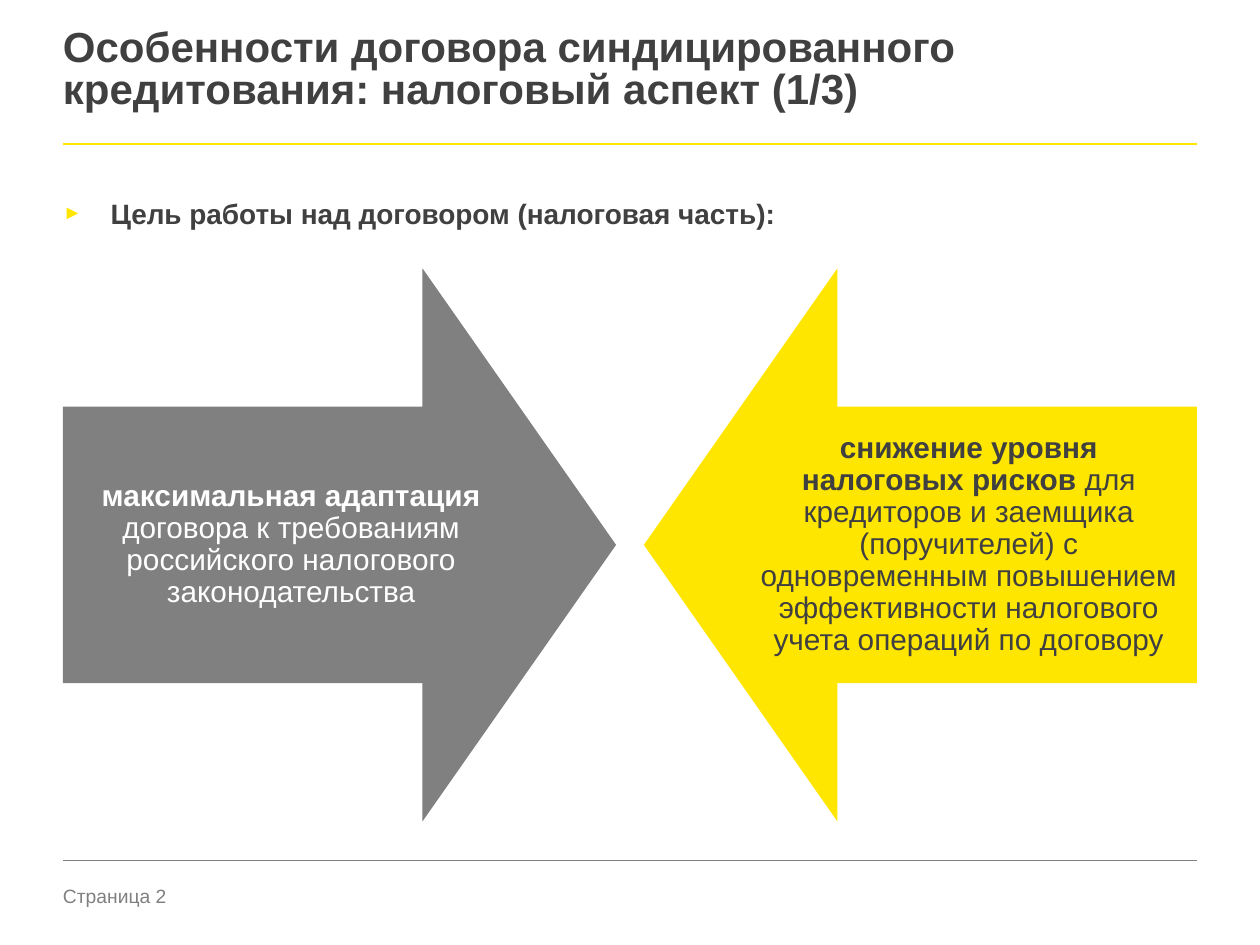
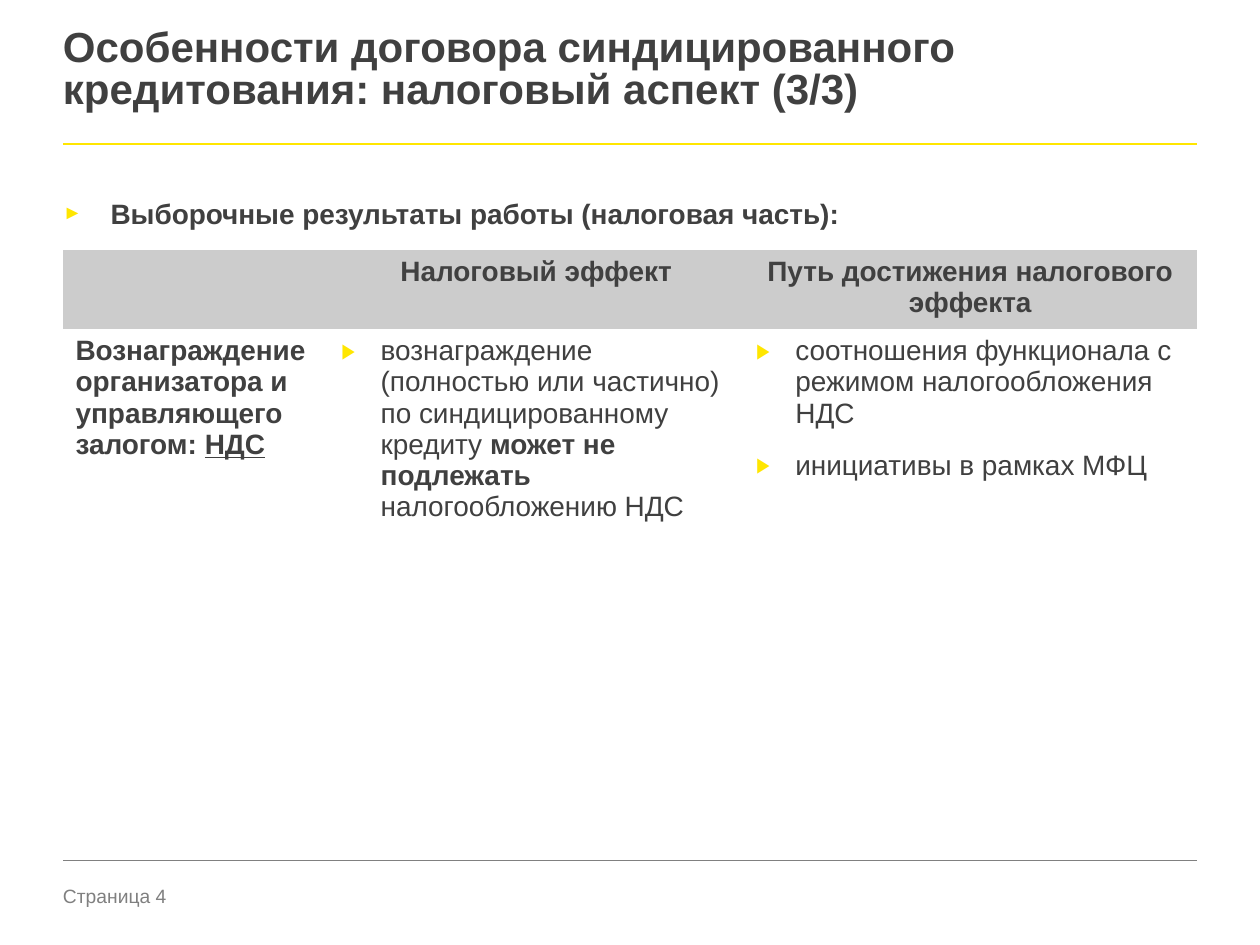
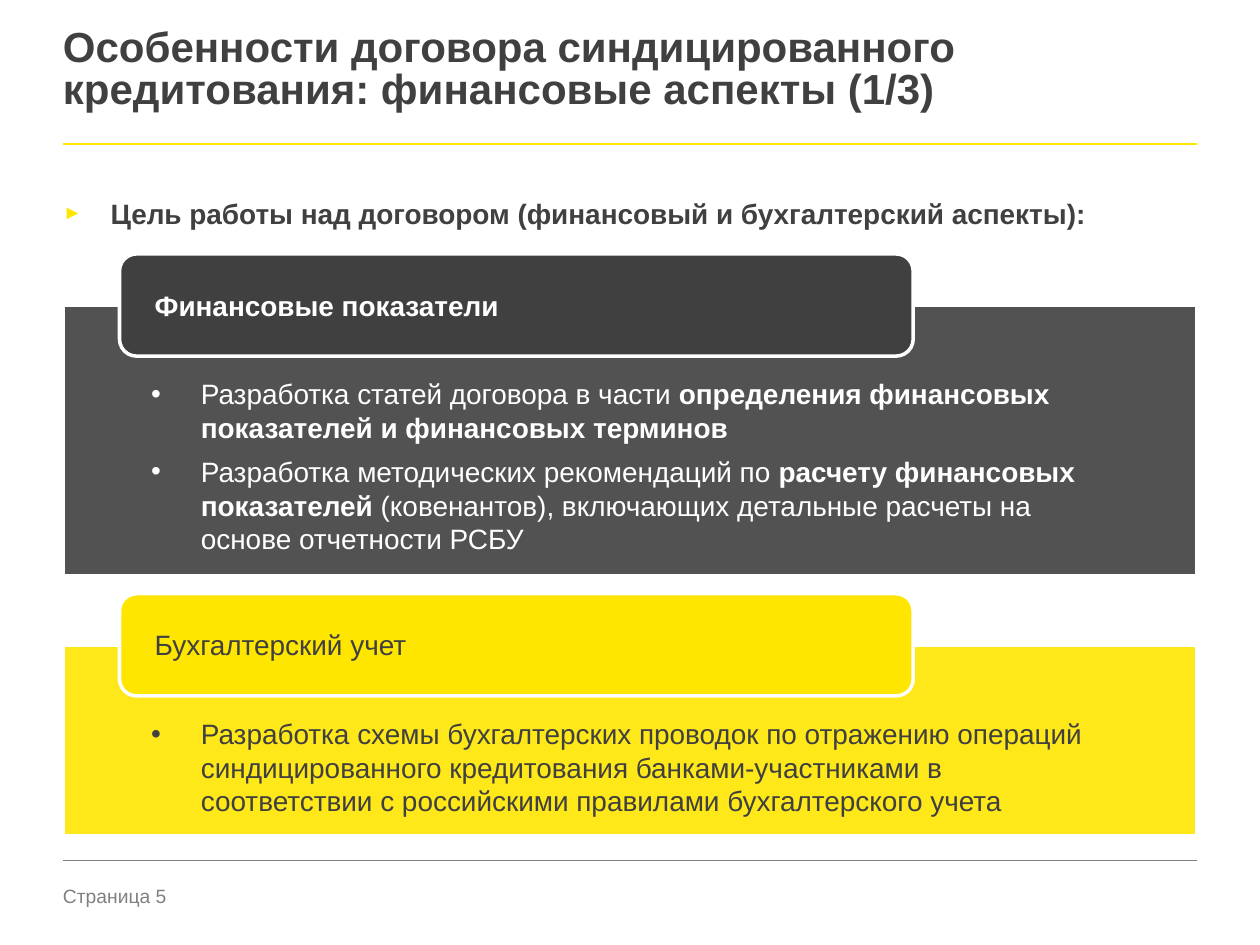
import lxml.etree
import pptx
import pptx.dml.color
import pptx.enum.shapes
import pptx.enum.text
import pptx.oxml.ns
import pptx.util

Cm = pptx.util.Cm
Pt = pptx.util.Pt
SHAPES = pptx.enum.shapes.MSO_SHAPE
ANCHOR = pptx.enum.text.MSO_ANCHOR
ALIGN = pptx.enum.text.PP_ALIGN

# Runs are (text, style): "b" is bold, "u" is underlined.
TITLE_START = "Особенности договора синдицированного кредитования: "
TAX_GOAL = {
    "page": 2,
    "title": "налоговый аспект (1/3)",
    "lead": "Цель работы над договором (налоговая часть):",
}
TAX_RESULTS = {
    "page": 4,
    "title": "налоговый аспект (3/3)",
    "lead": "Выборочные результаты работы (налоговая часть):",
}
FINANCE_GOAL = {
    "page": 5,
    "title": "финансовые аспекты (1/3)",
    "lead": "Цель работы над договором (финансовый и бухгалтерский аспекты):",
}

DARK, GREY, PALE, YELLOW, WHITE = "404040", "808080", "CCCCCC", "FFE600", "FFFFFF"

ARROWS = [
    (SHAPES.RIGHT_ARROW, GREY, WHITE, [
        ("максимальная адаптация ", "b"),
        ("договора к требованиям российского налогового законодательства", "")]),
    (SHAPES.LEFT_ARROW, YELLOW, DARK, [
        ("снижение уровня налоговых рисков ", "b"),
        ("для кредиторов и заемщика (поручителей) с одновременным повышением "
         "эффективности налогового учета операций по договору", "")]),
]

TABLE_HEADER = ["", "Налоговый эффект", "Путь достижения налогового эффекта"]
TABLE_TOPIC = [("Вознаграждение организатора и управляющего залогом: ", "b"), ("НДС", "bu")]
TABLE_BULLETS = [
    [[("вознаграждение (полностью или частично) по синдицированному кредиту ", ""),
      ("может не подлежать ", "b"),
      ("налогообложению НДС", "")]],
    [[("соотношения функционала с режимом налогообложения НДС", "")],
     [("инициативы в рамках МФЦ", "")]],
]

# Top and height of the panel in cm, fill, text colour, heading, bullets
PANELS = [
    (6.15, 5.46, DARK, WHITE, ("Финансовые показатели", "b"), [
        [("Разработка статей договора в части ", ""),
         ("определения финансовых показателей и финансовых терминов", "b")],
        [("Разработка методических рекомендаций по ", ""),
         ("расчету финансовых показателей", "b"),
         (" (ковенантов), включающих детальные расчеты на основе отчетности РСБУ", "")]]),
    (13, 3.84, YELLOW, DARK, ("Бухгалтерский учет", ""), [
        [("Разработка схемы бухгалтерских проводок по отражению операций "
          "синдицированного кредитования банками-участниками в соответствии "
          "с российскими правилами бухгалтерского учета", "")]]),
]

FONT = "Arial"
LEFT, WIDTH = 1.27, 22.86
ARROW_TOP, ARROW_SIDE = 5.41, 11.15
TABLE_TOP, COLUMN_WIDTHS, ROW_HEIGHT = 5.03, (5.36, 8.36, 9.14), 1.04
TAB_LEFT, TAB_WIDTH, TAB_HEIGHT = 2.41, 16, 2.06
PLAIN_TABLE_STYLE = "{2D5ABB26-0587-4C30-8999-92F81FD0307C}"


def rgb(value):
    return pptx.dml.color.RGBColor.from_string(value)


def add_child(parent, tag, **attributes):
    return lxml.etree.SubElement(parent, pptx.oxml.ns.qn(tag), **attributes)


def add_runs(paragraph, runs, color, size=16):
    for text, style in runs:
        run = paragraph.add_run()
        run.text = text
        run.font.name = FONT
        run.font.size = Pt(size)
        run.font.color.rgb = rgb(color)
        run.font.bold = "b" in style
        run.font.underline = "u" in style


def set_bullet(paragraph, character, indent, color, percent=100):
    properties = paragraph._p.get_or_add_pPr()
    properties.set("marL", str(Cm(indent)))
    properties.set("indent", str(-Cm(indent)))
    add_child(add_child(properties, "a:buClr"), "a:srgbClr", val=color)
    add_child(properties, "a:buSzPct", val=str(percent * 1000))
    add_child(properties, "a:buFont", typeface=FONT)
    add_child(properties, "a:buChar", char=character)


def add_bullets(frame, items, color, before, bullet):
    """Fill a text frame with bulleted paragraphs; bullet holds the set_bullet arguments."""
    for index, runs in enumerate(items):
        paragraph = frame.add_paragraph() if index else frame.paragraphs[0]
        set_bullet(paragraph, *bullet)
        paragraph.space_before = Pt(before if index else 0)
        paragraph.space_after = Pt(6)
        add_runs(paragraph, runs, color)


def set_frame(frame, margins, anchor=ANCHOR.TOP):
    frame.word_wrap = True
    frame.vertical_anchor = anchor
    (frame.margin_left, frame.margin_top,
     frame.margin_right, frame.margin_bottom) = map(Cm, margins)


def add_text_box(slide, left, top, width, height):
    box = slide.shapes.add_textbox(Cm(left), Cm(top), Cm(width), Cm(height))
    set_frame(box.text_frame, (0, 0, 0, 0))
    return box.text_frame


def add_shape(slide, kind, left, top, width, height, fill, outline=None):
    shape = slide.shapes.add_shape(kind, Cm(left), Cm(top), Cm(width), Cm(height))
    shape.shadow.inherit = False
    shape.fill.solid()
    shape.fill.fore_color.rgb = rgb(fill)
    if outline:
        shape.line.color.rgb = rgb(outline)
        shape.line.width = Pt(2)
    else:
        shape.line.fill.background()
    return shape


def add_rule(slide, top, color, weight):
    rule = slide.shapes.add_connector(
        pptx.enum.shapes.MSO_CONNECTOR.STRAIGHT,
        Cm(LEFT), Cm(top), Cm(LEFT + WIDTH), Cm(top))
    rule.line.color.rgb = rgb(color)
    rule.line.width = Pt(weight)
    add_child(rule._element.spPr, "a:effectLst")


def add_slide(presentation, content):
    """Add a slide with the footer, rules, title and lead line that all slides share."""
    slide = presentation.slides.add_slide(presentation.slide_layouts[6])
    footer = add_text_box(slide, LEFT, 17.83, 3.02, 0.66)
    add_runs(footer.paragraphs[0], [(f"Страница {content['page']}", "")], GREY, 11)
    add_rule(slide, 2.9, YELLOW, 1.5)
    add_rule(slide, 17.35, GREY, 0.25)
    title = add_text_box(slide, LEFT, 0.56, 20.2, 2.39).paragraphs[0]
    title.line_spacing = 0.85
    add_runs(title, [(TITLE_START + content["title"], "b")], DARK, 24)
    lead = add_text_box(slide, LEFT, 3.96, WIDTH, 1.17)
    add_bullets(lead, [[(content["lead"], "b")]], DARK, 6, ("►", 0.96, YELLOW, 70))
    return slide


def add_arrows(slide):
    lefts = (LEFT, LEFT + WIDTH - ARROW_SIDE)
    for left, (kind, fill, color, runs) in zip(lefts, ARROWS):
        arrow = add_shape(slide, kind, left, ARROW_TOP, ARROW_SIDE, ARROW_SIDE, fill)
        arrow.adjustments[0], arrow.adjustments[1] = 0.5, 0.35
        set_frame(arrow.text_frame, [0.33] * 4, ANCHOR.MIDDLE)
        paragraph = arrow.text_frame.paragraphs[0]
        paragraph.alignment = ALIGN.CENTER
        paragraph.line_spacing = 0.9
        add_runs(paragraph, runs, color, 17)


def add_results_table(slide):
    table = slide.shapes.add_table(
        2, len(COLUMN_WIDTHS), Cm(LEFT), Cm(TABLE_TOP), Cm(WIDTH), Cm(2 * ROW_HEIGHT)).table
    table._tbl.tblPr.find(pptx.oxml.ns.qn("a:tableStyleId")).text = PLAIN_TABLE_STYLE
    table.first_row = table.horz_banding = False
    for index, (width, heading) in enumerate(zip(COLUMN_WIDTHS, TABLE_HEADER)):
        table.columns[index].width = Cm(width)
        header, body = table.cell(0, index), table.cell(1, index)
        header.fill.solid()
        header.fill.fore_color.rgb = rgb(PALE)
        body.fill.background()
        if heading:
            paragraph = header.text_frame.paragraphs[0]
            paragraph.alignment = ALIGN.CENTER
            add_runs(paragraph, [(heading, "b")], DARK)
            add_bullets(body.text_frame, TABLE_BULLETS[index - 1], DARK, 6,
                        ("▶", 0.79, YELLOW, 75))
        else:
            add_runs(body.text_frame.paragraphs[0], TABLE_TOPIC, DARK)


def add_panels(slide):
    for top, height, fill, color, heading, items in PANELS:
        panel = add_shape(slide, SHAPES.RECTANGLE, LEFT, top, WIDTH, height, fill, WHITE)
        fill_color = panel._element.spPr.find(".//" + pptx.oxml.ns.qn("a:srgbClr"))
        add_child(fill_color, "a:alpha", val="90000")
        set_frame(panel.text_frame, (1.78, 1.45, 1.78, 0.3))
        add_bullets(panel.text_frame, items, color, 0, ("•", 1, color))
        for paragraph in panel.text_frame.paragraphs:
            paragraph.alignment = ALIGN.LEFT

        tab = add_shape(slide, SHAPES.ROUNDED_RECTANGLE, TAB_LEFT, top - TAB_HEIGHT / 2,
                        TAB_WIDTH, TAB_HEIGHT, fill, WHITE)
        set_frame(tab.text_frame, (0.61, 0, 0.61, 0), ANCHOR.MIDDLE)
        paragraph = tab.text_frame.paragraphs[0]
        paragraph.alignment = ALIGN.LEFT
        add_runs(paragraph, [heading], color)


def main():
    presentation = pptx.Presentation()
    presentation.slide_width, presentation.slide_height = Cm(25.4), Cm(19.05)
    add_arrows(add_slide(presentation, TAX_GOAL))
    add_results_table(add_slide(presentation, TAX_RESULTS))
    add_panels(add_slide(presentation, FINANCE_GOAL))
    presentation.save("out.pptx")


if __name__ == "__main__":
    main()
